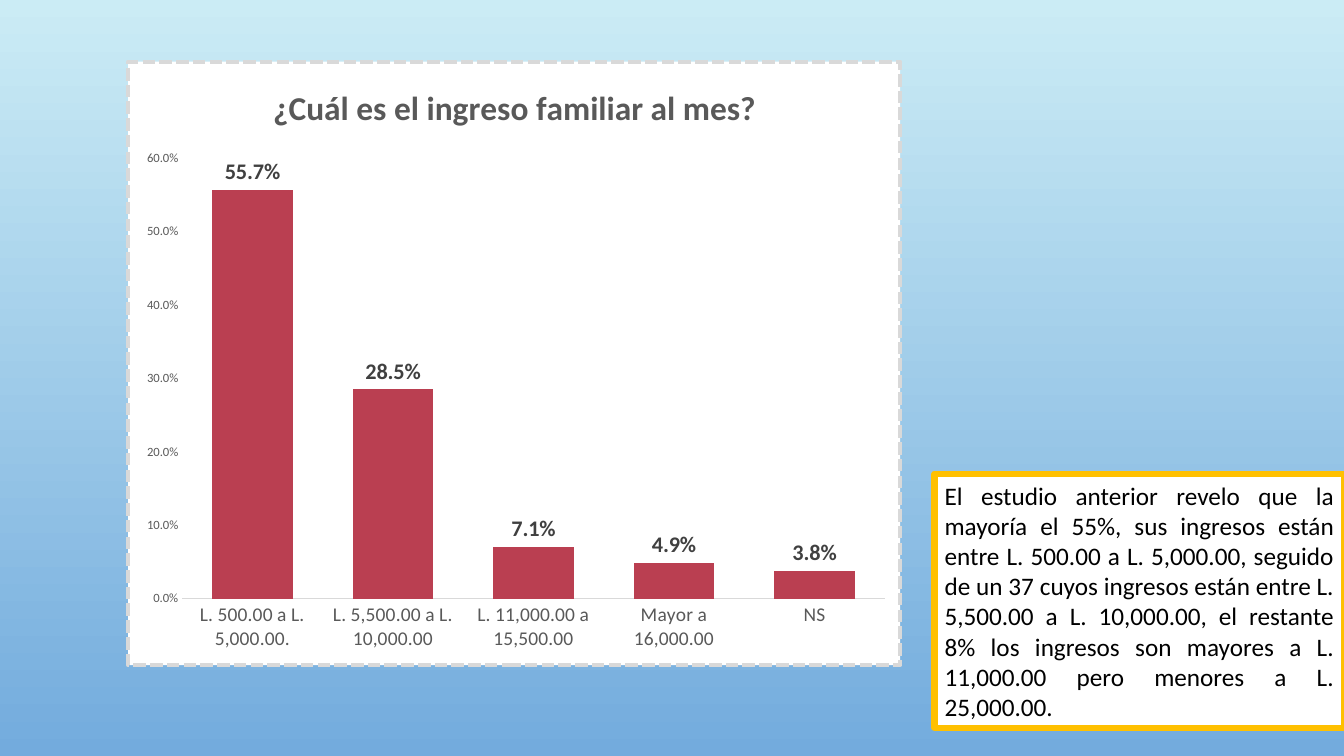
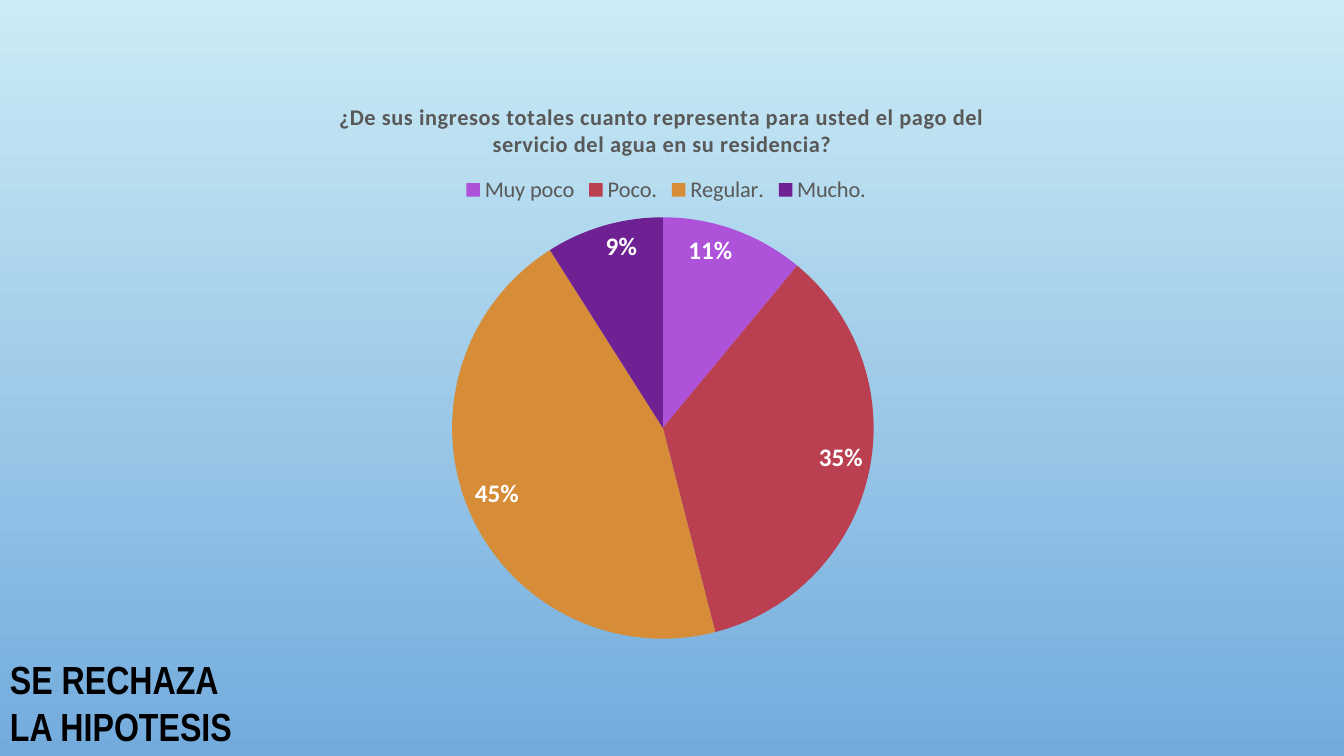
from lxml.etree import SubElement
from pptx import Presentation
from pptx.chart.data import CategoryChartData
from pptx.dml.color import RGBColor
from pptx.enum.chart import (XL_CHART_TYPE, XL_LABEL_POSITION, XL_LEGEND_POSITION,
                             XL_TICK_MARK)
from pptx.enum.shapes import MSO_SHAPE
from pptx.enum.text import MSO_ANCHOR, PP_ALIGN
from pptx.oxml import parse_xml
from pptx.oxml.ns import nsdecls, qn
from pptx.util import Inches, Pt

COLORS = {
    "sky": "CBECF5", "blue": "73ABDD", "white": "FFFFFF", "black": "000000",
    "gold": "FFC000", "gray": "595959", "dark": "404040", "rule": "D9D9D9",
    "lilac": "AE52D9", "red": "BA3F51", "orange": "D78D38", "purple": "6F2093",
}
FONT = "Calibri"

INCOME = {
    "title": "¿Cuál es el ingreso familiar al mes?",
    "data": {"L. 500.00 a L. 5,000.00.": 0.557, "L. 5,500.00 a L. 10,000.00": 0.285,
             "L. 11,000.00 a 15,500.00": 0.071, "Mayor a 16,000.00": 0.049, "NS": 0.038},
    "note": "El estudio anterior revelo que la mayoría el 55%, sus ingresos están entre "
            "L. 500.00 a L. 5,000.00, seguido de un 37 cuyos ingresos están entre "
            "L. 5,500.00 a L. 10,000.00, el restante 8% los ingresos son mayores a "
            "L. 11,000.00 pero menores a L. 25,000.00.",
}
WATER = {
    "title": "¿De sus ingresos totales cuanto representa para usted el pago del "
             "servicio del agua en su residencia?",
    "data": {"Muy poco": 11, "Poco.": 35, "Regular.": 45, "Mucho.": 9},
    "slices": ["lilac", "red", "orange", "purple"],
    "verdict": "SE RECHAZA LA HIPOTESIS",
}


def rgb(name):
    return RGBColor.from_string(COLORS[name])


def style(font, size, color, bold=False, name=FONT):
    font.size, font.bold, font.name = Pt(size), bold, name
    font.color.rgb = rgb(color)


def layout_xml(inner=False, **shares):
    """Manual chart layout; shares are x, y, w, h as parts of the chart's size."""
    layout = parse_xml(f"<c:layout {nsdecls('c')}><c:manualLayout/></c:layout>")
    manual = layout[0]
    if inner:
        SubElement(manual, qn("c:layoutTarget"), val="inner")
    for key in ("x", "y"):
        SubElement(manual, qn(f"c:{key}Mode"), val="edge")
    for key, share in shares.items():
        SubElement(manual, qn(f"c:{key}"), val=str(share))
    return layout


def place(parent, index, layout):
    for old in parent.findall(qn("c:layout")):
        parent.remove(old)
    parent.insert(index, layout)


def frame_chart(chart, fill="<a:noFill/>", line="<a:ln><a:noFill/></a:ln>"):
    chart_el = chart._chartSpace.find(qn("c:chart"))
    chart_el.addnext(parse_xml(f"<c:spPr {nsdecls('c', 'a')}>{fill}{line}</c:spPr>"))


def add_chart(slide, kind, content, box, title_size, title_at, plot, spacing=0):
    """Add a titled chart; spacing is the title's letter spacing in points."""
    data = CategoryChartData()
    data.categories = list(content["data"])
    data.add_series("Series 1", list(content["data"].values()))
    chart = slide.shapes.add_chart(kind, *map(Inches, box), data).chart
    chart.font.size, chart.font.name = Pt(10), FONT
    chart.has_title, chart.has_legend = True, False
    r = chart.chart_title.text_frame.paragraphs[0].add_run()
    r.text = content["title"]
    style(r.font, title_size, "gray", True)
    r._r.get_or_add_rPr().set("spc", str(round(spacing * 100)))
    place(chart.chart_title._element, 1, layout_xml(**title_at))
    place(chart._chartSpace.find(".//" + qn("c:plotArea")), 0,
          layout_xml(inner=True, **plot))
    return chart


def add_labels(plot, size, color, fmt, position):
    plot.has_data_labels = True
    labels = plot.data_labels
    labels.number_format, labels.number_format_is_linked = fmt, False
    labels.position = position
    style(labels.font, size, color, True)
    return labels


def write(sp, text, size, align, **font):
    tf = sp.text_frame
    tf.word_wrap = True
    p = tf.paragraphs[0]
    p.alignment = align
    r = p.add_run()
    r.text = text
    style(r.font, size, "black", **font)
    return tf


def income_slide(slide):
    sp = slide.shapes.add_shape(MSO_SHAPE.RECTANGLE,
                                *map(Inches, (9.27, 4.7, 4.06, 2.52)))
    sp.shadow.inherit = False
    sp.fill.solid()
    sp.fill.fore_color.rgb = rgb("white")
    sp.line.color.rgb, sp.line.width = rgb("gold"), Pt(4.5)
    write(sp, INCOME["note"], 18, PP_ALIGN.JUSTIFY).vertical_anchor = MSO_ANCHOR.MIDDLE

    chart = add_chart(slide, XL_CHART_TYPE.COLUMN_CLUSTERED, INCOME,
                      (1.25, 0.59, 7.7, 6.03), 24, dict(x=0.18, y=0.03),
                      dict(x=0.07, y=0.16, w=0.91, h=0.73))
    frame_chart(chart,
                f'<a:solidFill><a:srgbClr val="{COLORS["white"]}"/></a:solidFill>',
                f'<a:ln w="{Pt(3)}"><a:solidFill><a:srgbClr val="{COLORS["rule"]}"/>'
                '</a:solidFill><a:prstDash val="sysDash"/></a:ln>')
    cats, vals = chart.category_axis, chart.value_axis
    for axis, size in ((cats, 14), (vals, 9)):
        axis.major_tick_mark = axis.minor_tick_mark = XL_TICK_MARK.NONE
        axis.has_major_gridlines = False
        style(axis.tick_labels.font, size, "gray")
    cats.format.line.color.rgb, cats.format.line.width = rgb("rule"), Pt(0.75)
    vals.format.line.fill.background()
    vals.minimum_scale, vals.maximum_scale, vals.major_unit = 0, 0.6, 0.1
    vals.tick_labels.number_format = "0.0%"
    vals.tick_labels.number_format_is_linked = False
    plot = chart.plots[0]
    plot.gap_width, plot.vary_by_categories = 75, False
    fill = plot.series[0].format.fill
    fill.solid()
    fill.fore_color.rgb = rgb("red")
    add_labels(plot, 16, "dark", "0.0%", XL_LABEL_POSITION.OUTSIDE_END).show_value = True


def water_slide(slide):
    sp = slide.shapes.add_textbox(*map(Inches, (0, 6.45, 2.62, 1.04)))
    write(sp, WATER["verdict"], 28, PP_ALIGN.LEFT, bold=True, name="Arial Narrow")

    chart = add_chart(slide, XL_CHART_TYPE.PIE, WATER, (2.18, 0.8, 8.79, 5.65), 16,
                      dict(x=0.13, y=0.03), dict(x=0.26, y=0.24, w=0.48, h=0.74),
                      spacing=0.5)
    frame_chart(chart)
    chart.has_legend = True
    legend = chart.legend
    legend.position, legend.include_in_layout = XL_LEGEND_POSITION.TOP, False
    style(legend.font, 16, "gray")
    place(legend._element, 1, layout_xml(x=0.27, y=0.16))
    plot = chart.plots[0]
    plot.vary_by_categories = True
    for i, color in enumerate(WATER["slices"]):
        fill = plot.series[0].points[i].format.fill
        fill.solid()
        fill.fore_color.rgb = rgb(color)
    labels = add_labels(plot, 18, "white", "0%", XL_LABEL_POSITION.INSIDE_END)
    labels.show_percentage, labels.show_value = True, False


def set_background(master):
    fill = master.background.fill
    fill.gradient()
    fill.gradient_angle = 270
    for stop, color, position in zip(fill.gradient_stops, ("sky", "blue"), (0, 1)):
        stop.color.rgb, stop.position = rgb(color), position


def main():
    prs = Presentation()
    prs.slide_width, prs.slide_height = Inches(13.33), Inches(7.5)
    set_background(prs.slide_master)
    for build in (income_slide, water_slide):
        build(prs.slides.add_slide(prs.slide_layouts[6]))
    prs.save("out.pptx")


if __name__ == "__main__":
    main()
